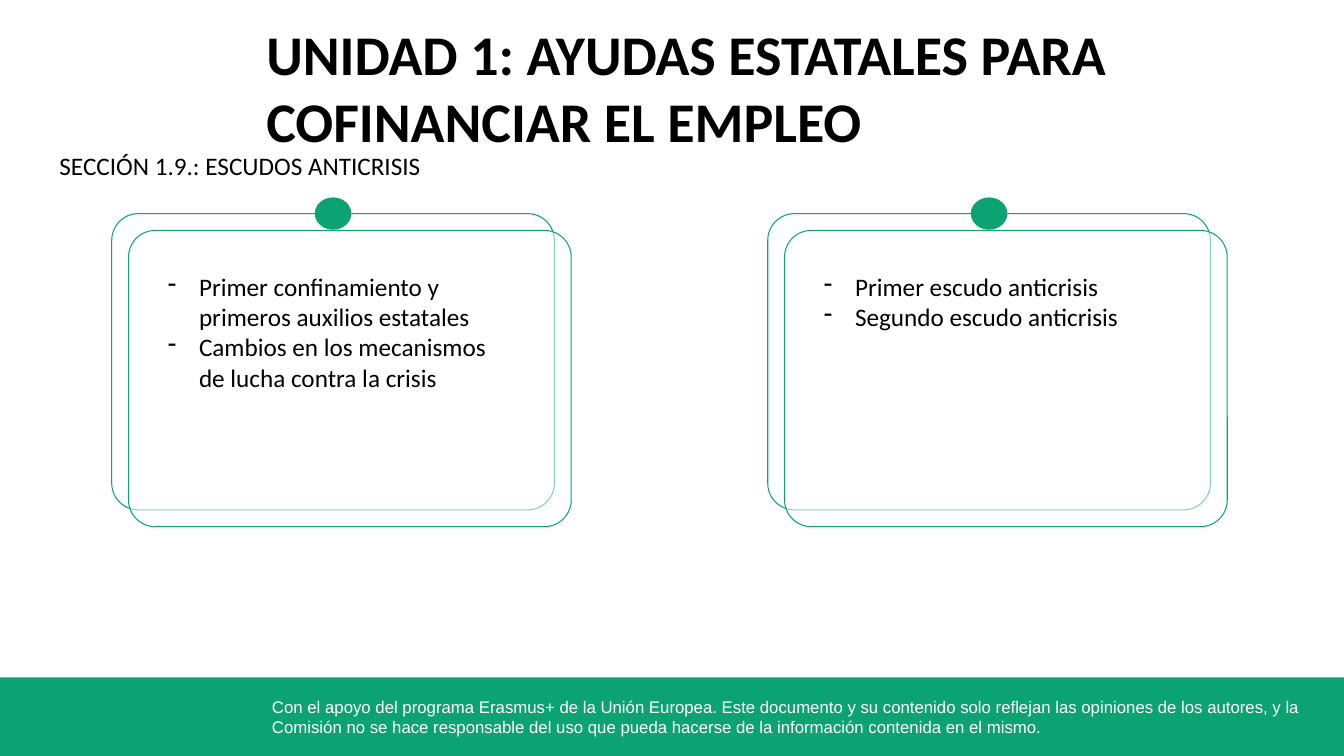
import collections

import lxml.etree
import pptx
import pptx.dml.color
import pptx.enum.shapes
import pptx.enum.text
import pptx.oxml.ns
import pptx.util

GREEN = pptx.dml.color.RGBColor(0x0C, 0xA3, 0x73)
WHITE = pptx.dml.color.RGBColor(0xFF, 0xFF, 0xFF)
BLACK = pptx.dml.color.RGBColor(0x00, 0x00, 0x00)

COLUMNS, ROWS = 32, 18
CELL = pptx.util.Inches(7.5) // ROWS
SHAPES = pptx.enum.shapes.MSO_SHAPE

Box = collections.namedtuple("Box", "left top width height")


def emu(box):
    return [round(length * CELL) for length in box]


def add_shape(page, kind, box, fill, line=None, opacity=None):
    shape = page.shapes.add_shape(kind, *emu(box))
    shape.shadow.inherit = False
    shape.fill.solid()
    shape.fill.fore_color.rgb = fill
    if opacity is not None:
        color = shape.fill._xPr.find(".//" + pptx.oxml.ns.qn("a:srgbClr"))
        alpha = lxml.etree.SubElement(color, pptx.oxml.ns.qn("a:alpha"))
        alpha.set("val", str(opacity * 1000))
    if line is None:
        shape.line.fill.background()
    else:
        shape.line.color.rgb = line
        shape.line.width = pptx.util.Pt(0.75)
    return shape


def add_dash(para):
    properties = para._p.get_or_add_pPr()
    indent = pptx.util.Inches(0.31)
    properties.set("marL", str(indent))
    properties.set("indent", str(-indent))
    bullet = lxml.etree.SubElement(properties, pptx.oxml.ns.qn("a:buChar"))
    bullet.set("char", "-")


def write(frame, lines, size=18, font="Calibri", color=BLACK, bold=False, dashes=False):
    frame.word_wrap = True
    frame.auto_size = pptx.enum.text.MSO_AUTO_SIZE.SHAPE_TO_FIT_TEXT
    frame.vertical_anchor = pptx.enum.text.MSO_ANCHOR.TOP
    for index, line in enumerate(lines):
        para = frame.add_paragraph() if index else frame.paragraphs[0]
        para.alignment = pptx.enum.text.PP_ALIGN.LEFT
        if dashes:
            add_dash(para)
        span = para.add_run()
        span.text = line
        span.font.size = pptx.util.Pt(size)
        span.font.name = font
        span.font.color.rgb = color
        span.font.bold = bold


def add_text(page, box, lines, **style):
    write(page.shapes.add_textbox(*emu(box)).text_frame, lines, **style)


def add_footer(page, box, notice):
    add_shape(page, SHAPES.RECTANGLE, box, GREEN)
    text_box = Box(box.left + 6.24, box.top + 0.33, 25.01, 1.2)
    add_text(page, text_box, [notice], size=12, font="Arial", color=WHITE)


def add_heading(page, box, title, section):
    heading = page.shapes.title
    title_box = Box(box.left + 5.16, box.top, 21.55, 1.66)
    heading.left, heading.top, heading.width, heading.height = emu(title_box)
    frame = heading.text_frame
    frame.margin_left = frame.margin_top = frame.margin_right = frame.margin_bottom = 0
    write(frame, [title], size=40, bold=True)
    add_text(page, Box(box.left, box.top + 3, 15.98, 0.96), [section])


def add_card(page, box, topics):
    offset, dot_width, dot_height = 0.4, 0.87, 0.77
    width = box.width - offset
    height = box.height - offset - dot_height / 2
    for shift in (0, offset):
        frame_box = Box(box.left + shift, box.top + dot_height / 2 + shift, width, height)
        frame = add_shape(page, SHAPES.ROUNDED_RECTANGLE, frame_box, WHITE, GREEN, 50)
        frame.adjustments[0] = 0.09
    dot_left = box.left + (width - dot_width) / 2
    add_shape(page, SHAPES.OVAL, Box(dot_left, box.top, dot_width, dot_height), GREEN)
    text_box = Box(box.left + 1.1, box.top + 1.64, 8.33, 3.89)
    add_text(page, text_box, topics, dashes=True)


def build_page(deck):
    page = deck.slides.add_slide(deck.slide_layouts[5])
    add_footer(
        page,
        Box(0, 16.13, COLUMNS, ROWS - 16.13),
        "Con el apoyo del programa Erasmus+ de la Unión Europea. Este documento y su "
        "contenido solo reflejan las opiniones de los autores, y la Comisión no se hace "
        "responsable del uso que pueda hacerse de la información contenida en el mismo.",
    )
    cards = [
        [
            "Primer confinamiento y primeros auxilios estatales",
            "Cambios en los mecanismos de lucha contra la crisis",
        ],
        ["Primer escudo anticrisis", "Segundo escudo anticrisis"],
    ]
    for index, topics in enumerate(cards):
        add_card(page, Box(2.66 + 15.62 * index, 4.7, 10.94, 7.84), topics)
    add_heading(
        page,
        Box(1.18, 0.46, 26.71, 3.96),
        "UNIDAD 1: AYUDAS ESTATALES PARA COFINANCIAR EL EMPLEO",
        "SECCIÓN 1.9.: ESCUDOS ANTICRISIS",
    )


def main():
    deck = pptx.Presentation()
    deck.slide_width = COLUMNS * CELL
    deck.slide_height = ROWS * CELL
    build_page(deck)
    deck.save("out.pptx")


if __name__ == "__main__":
    main()
